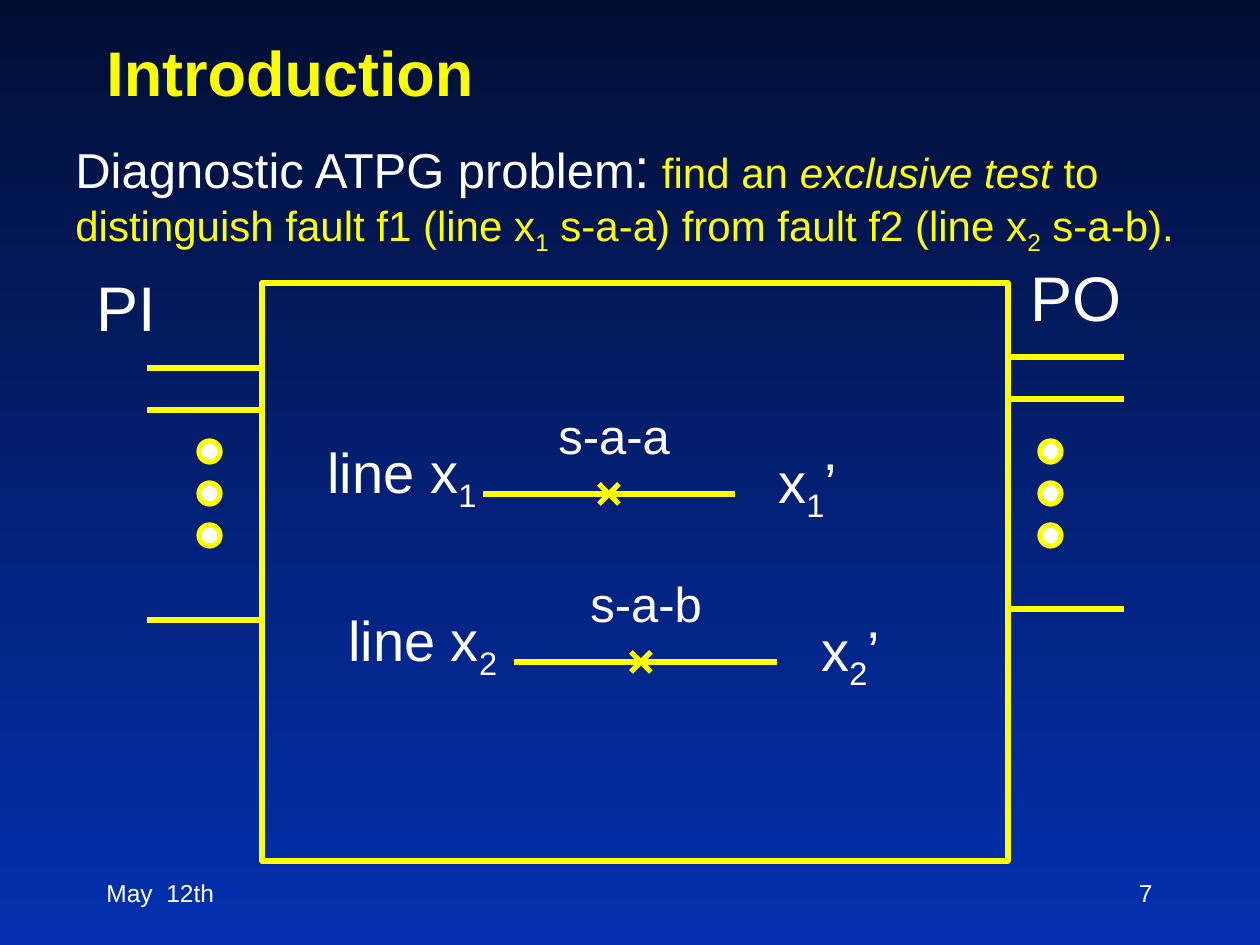
"""Build the slide that introduces the diagnostic ATPG problem."""
from pptx import Presentation
from pptx.dml.color import RGBColor
from pptx.enum.shapes import MSO_CONNECTOR as Connector, MSO_SHAPE as Shape
from pptx.enum.text import MSO_ANCHOR as Anchor, PP_ALIGN as Align
from pptx.oxml.ns import qn
from pptx.util import Pt
from lxml.etree import SubElement

PX = 914400 / 126
YELLOW, WHITE = "FFFF00", "FFFFFF"


def px(length):
    """Turn pixels into EMU."""
    return round(length * PX)


def color(hex_code):
    """Turn a hex string into a colour."""
    return RGBColor.from_string(hex_code)


def paint_background(slide, top, bottom):
    """Fill the background with a vertical gradient."""
    fill = slide.background.fill
    fill.gradient()
    fill.gradient_angle = 270
    for stop, shade in zip(fill.gradient_stops, (top, bottom)):
        stop.color.rgb = color(shade)


def add_text(slide, box, pieces, size, ink=WHITE, bold=False,
             anchor=Anchor.TOP, align=Align.LEFT):
    """Add one paragraph made of (text, style) pieces."""
    frame = slide.shapes.add_textbox(*map(px, box)).text_frame
    frame.word_wrap = True
    frame.vertical_anchor = anchor
    paragraph = frame.paragraphs[0]
    paragraph.alignment = align
    font = paragraph.font
    font.name, font.size, font.bold = "Arial", Pt(size), bold
    font.color.rgb = color(ink)
    for text, style in pieces:
        run = paragraph.add_run()
        run.text = text
        if "size" in style:
            run.font.size = Pt(style["size"])
        if "ink" in style:
            run.font.color.rgb = color(style["ink"])
        if "italic" in style:
            run.font.italic = True
        if "sub" in style:
            run._r.get_or_add_rPr().set("baseline", "-25000")


def add_line(slide, x1, y1, x2, y2):
    """Draw a yellow line."""
    wire = slide.shapes.add_connector(Connector.STRAIGHT, *map(px, (x1, y1, x2, y2)))
    wire.line.color.rgb = color(YELLOW)
    wire.line.width = Pt(3)
    SubElement(wire._element.spPr, qn("a:effectLst"))


def add_outlined(slide, kind, box, fill=None):
    """Draw a shape with a yellow outline."""
    shape = slide.shapes.add_shape(kind, *map(px, box))
    shape.shadow.inherit = False
    shape.line.color.rgb = color(YELLOW)
    shape.line.width = Pt(3)
    if fill:
        shape.fill.solid()
        shape.fill.fore_color.rgb = color(fill)
    else:
        shape.fill.background()


def add_port(slide, name, name_box, left, right, top, dots_left):
    """Draw a named bundle of terminals with dots for the omitted ones."""
    add_text(slide, name_box, [(name, {})], 36)
    for offset in (0, 42, 252):
        add_line(slide, left, top + offset, right, top + offset)
    for row in range(3):
        add_outlined(slide, Shape.FLOWCHART_CONNECTOR,
                     (dots_left, 441 + 42 * row, 21, 21), WHITE)


def add_fault(slide, index, fault, label_left, start, end, site, y, output_left):
    """Draw a line with its stuck-at fault site and its labels."""
    subscript = (index, {"sub": True})
    add_text(slide, (label_left, y - 63, 200, 81), [("line x", {}), subscript], 32)
    add_text(slide, (site - 63, y - 95, 147, 72), [(fault, {})], 28)
    add_text(slide, (output_left, y - 53, 126, 81),
             [("x", {}), subscript, ("’", {})], 32)
    add_line(slide, start, y, end, y)
    for rise in (-10, 10):
        add_line(slide, site - 10, y - rise, site + 10, y + rise)


def main():
    """Build and save the slide."""
    deck = Presentation()
    deck.slide_width, deck.slide_height = px(1260), px(945)
    slide = deck.slides.add_slide(deck.slide_layouts[6])
    paint_background(slide, "010E34", "0330AF")

    add_text(slide, (94, 31, 1071, 84), [("Introduction", {})], 36,
             "FAFD00", bold=True, anchor=Anchor.BOTTOM)
    problem = [
        ("Diagnostic ATPG problem", {"size": 28, "ink": WHITE}),
        (":", {"size": 32, "ink": WHITE}),
        (" find an ", {}),
        ("exclusive test ", {"italic": True}),
        ("to distinguish fault f1 (line x", {}),
        ("1", {"sub": True}),
        (" s-a-a) from fault f2 (line x", {}),
        ("2", {"sub": True}),
        (" s-a-b).", {}),
    ]
    add_text(slide, (63, 126, 1155, 131), problem, 24, YELLOW)

    add_outlined(slide, Shape.RECTANGLE, (262, 283, 746, 578))
    add_port(slide, "PI", (84, 262, 94, 89), 147, 262, 368, 199)
    add_port(slide, "PO", (1018, 252, 136, 89), 1008, 1124, 357, 1040)
    add_fault(slide, "1", "s-a-a", 315, 483, 735, 609, 494, 766)
    add_fault(slide, "2", "s-a-b", 336, 514, 777, 641, 662, 809)

    add_text(slide, (94, 861, 262, 63), [("May  12th", {})], 14, anchor=Anchor.MIDDLE)
    add_text(slide, (903, 861, 262, 63), [("7", {})], 14,
             anchor=Anchor.MIDDLE, align=Align.RIGHT)
    deck.save("out.pptx")


if __name__ == "__main__":
    main()
